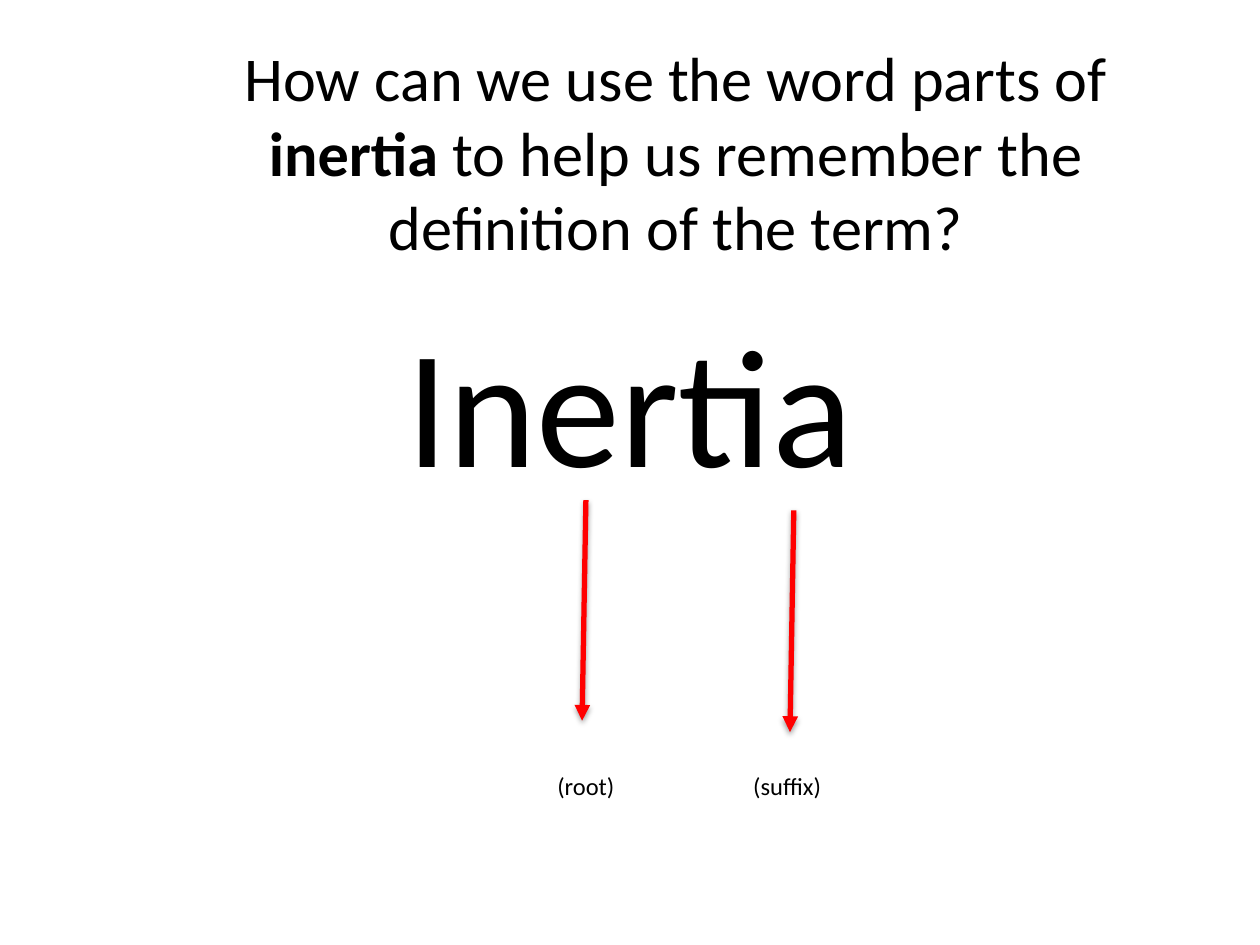
from dataclasses import dataclass

from lxml.etree import SubElement
from pptx import Presentation
from pptx.dml.color import RGBColor as RGB
from pptx.enum.shapes import MSO_CONNECTOR as Line, MSO_SHAPE as Shape
from pptx.enum.text import MSO_ANCHOR as Anchor, MSO_AUTO_SIZE as Fit, PP_ALIGN as Align
from pptx.oxml.ns import qn
from pptx.util import Inches, Pt


@dataclass(frozen=True)
class Theme:
    font: str = "Calibri"
    ink: RGB = RGB(0, 0, 0)
    paper: RGB = RGB(255, 255, 255)
    arrow: RGB = RGB(255, 0, 0)
    title: float = 35.6
    word: float = 96
    label: float = 14


THEME = Theme()


def place(shape, box):
    shape.left, shape.top, shape.width, shape.height = map(Inches, box)


def style(frame, size, align=Align.CENTER, anchor=Anchor.MIDDLE):
    frame.word_wrap = True
    frame.auto_size = Fit.NONE
    frame.vertical_anchor = anchor
    par = frame.paragraphs[0]
    par.alignment = align
    par.font.name = THEME.font
    par.font.size = Pt(size)
    par.font.color.rgb = THEME.ink


def add_title(slide, box, parts):
    """Fill the title from (text, bold) parts."""
    title = slide.shapes.title
    place(title, box)
    par = title.text_frame.paragraphs[0]
    for text, bold in parts:
        run = par.add_run()
        run.text = text
        run.font.bold = bold
    style(title.text_frame, THEME.title)


def add_word(slide, box, text):
    frame = slide.shapes.add_textbox(*map(Inches, box)).text_frame
    frame.text = text
    style(frame, THEME.word)


def add_arrow(slide, start, end):
    arrow = slide.shapes.add_connector(Line.STRAIGHT, *map(Inches, start + end))
    arrow.line.color.rgb = THEME.arrow
    arrow.line.width = Pt(3)
    SubElement(arrow.line._get_or_add_ln(), qn("a:tailEnd"), type="triangle")
    effects = SubElement(arrow._element.spPr, qn("a:effectLst"))
    shadow = SubElement(effects, qn("a:outerShdw"), blurRad=str(Pt(3.1)),
                        dist=str(Pt(1.6)), dir="5400000", rotWithShape="0")
    black = SubElement(shadow, qn("a:srgbClr"), val=str(THEME.ink))
    SubElement(black, qn("a:alpha"), val="36000")


def add_label(slide, box, text, align):
    label = slide.shapes.add_shape(Shape.RECTANGLE, *map(Inches, box))
    label.shadow.inherit = False
    label.fill.background()
    label.line.color.rgb = THEME.paper
    label.line.width = Pt(0.75)
    label.text_frame.text = text
    style(label.text_frame, THEME.label, align, Anchor.TOP)


def add_part(slide, box, text, tip, align=Align.CENTER):
    """Label a word part in the box, with an arrow from tip down towards it."""
    x, y, drop = tip
    add_arrow(slide, (x, y), (x - 0.03, y + drop))
    add_label(slide, box, text, align)


def main():
    deck = Presentation()
    deck.slide_width, deck.slide_height = Inches(10), Inches(7.5)
    slide = deck.slides.add_slide(deck.slide_layouts[5])
    add_title(slide, (1.18, 0.36, 8.37, 1.68), [
        ("How can we use the word parts of ", False),
        ("inertia", True),
        (" to help us remember the definition of the term?", False),
    ])
    add_word(slide, (0.5, 2.39, 9, 1.57), "Inertia")
    add_part(slide, (4.25, 6.07, 0.8, 0.34), "(root)", (4.65, 3.97, 1.75))
    add_part(slide, (5.88, 6.07, 0.8, 0.34), "(suffix)", (6.3, 4.05, 1.76), Align.LEFT)
    deck.save("out.pptx")


if __name__ == "__main__":
    main()
